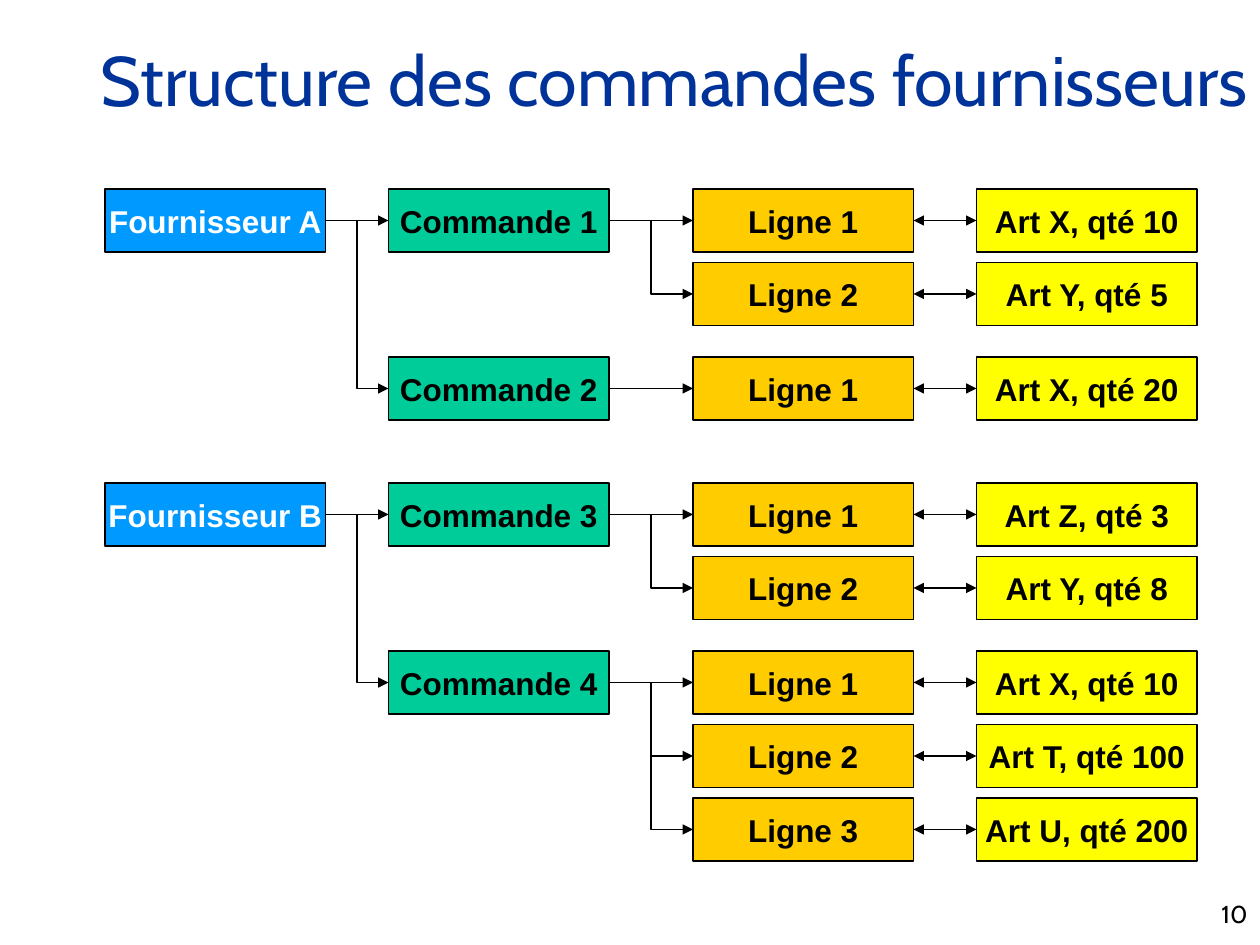
from pptx import Presentation
from pptx.dml.color import RGBColor
from pptx.enum.shapes import MSO_CONNECTOR, MSO_SHAPE
from pptx.enum.text import MSO_ANCHOR, PP_ALIGN
from pptx.oxml.ns import qn
from pptx.util import Pt
from lxml import etree

RECTANGLE = MSO_SHAPE.RECTANGLE
STRAIGHT, ELBOW = MSO_CONNECTOR.STRAIGHT, MSO_CONNECTOR.ELBOW
TOP, MIDDLE = MSO_ANCHOR.TOP, MSO_ANCHOR.MIDDLE
CENTER, RIGHT = PP_ALIGN.CENTER, PP_ALIGN.RIGHT
LEFT_SITE, RIGHT_SITE = 1, 3

COLORS = {
    "title": "003399",
    "black": "000000",
    "white": "FFFFFF",
    "supplier": "0099FF",
    "order": "00CC99",
    "line": "FFCC00",
    "article": "FFFF00",
}
COLUMNS = {"supplier": 60, "order": 222, "line": 396, "article": 558}
BOX_WIDTH, BOX_HEIGHT = 126, 36
FIRST_ROW = 108
LINE_PITCH, ORDER_GAP, SUPPLIER_GAP = 42, 12, 18

SUPPLIERS = {
    "Fournisseur A": {
        "Commande 1": ["Art X, qté 10", "Art Y, qté 5"],
        "Commande 2": ["Art X, qté 20"],
    },
    "Fournisseur B": {
        "Commande 3": ["Art Z, qté 3", "Art Y, qté 8"],
        "Commande 4": ["Art X, qté 10", "Art T, qté 100", "Art U, qté 200"],
    },
}


def color(name):
    return RGBColor.from_string(COLORS[name])


def write_text(shape, text, font_name, size, color_name, alignment, anchor, bold=False):
    text_frame = shape.text_frame
    text_frame.text = text
    text_frame.vertical_anchor = anchor
    paragraph = text_frame.paragraphs[0]
    paragraph.alignment = alignment
    font = paragraph.runs[0].font
    font.name, font.size, font.bold = font_name, Pt(size), bold
    font.color.rgb = color(color_name)


def add_label(slide, text, left, top, width, height, size, color_name, anchor):
    """Add a right-aligned text box."""
    shape = slide.shapes.add_textbox(Pt(left), Pt(top), Pt(width), Pt(height))
    shape.text_frame.word_wrap = True
    write_text(shape, text, "Cabin", size, color_name, RIGHT, anchor)


def add_box(slide, kind, text, top):
    shape = slide.shapes.add_shape(
        RECTANGLE, Pt(COLUMNS[kind]), Pt(top), Pt(BOX_WIDTH), Pt(BOX_HEIGHT))
    shape.shadow.inherit = False
    shape.fill.solid()
    shape.fill.fore_color.rgb = color(kind)
    shape.line.color.rgb = color("black")
    shape.line.width = Pt(0.75)
    shape.text_frame.word_wrap = False
    text_color = "white" if kind == "supplier" else "black"
    write_text(shape, text, "Arial", 18, text_color, CENTER, MIDDLE, bold=True)
    return shape


def add_arrow(slide, source, target, ends=("tailEnd",)):
    """Join two boxes, with an elbow when they are on different rows."""
    kind = STRAIGHT if source.top == target.top else ELBOW
    connector = slide.shapes.add_connector(kind, 0, 0, 0, 0)
    connector.begin_connect(source, RIGHT_SITE)
    connector.end_connect(target, LEFT_SITE)
    connector.line.color.rgb = color("black")
    connector.line.width = Pt(0.75)
    properties = connector._element.spPr
    line = properties.find(qn("a:ln"))
    for end in ends:
        etree.SubElement(line, qn(f"a:{end}"), type="triangle")
    etree.SubElement(properties, qn("a:effectLst"))


def add_order(slide, name, articles, top):
    """Add an order with its lines and articles; return its box."""
    order = add_box(slide, "order", name, top)
    for index, article_text in enumerate(articles):
        row = top + index * LINE_PITCH
        line = add_box(slide, "line", f"Ligne {index + 1}", row)
        article = add_box(slide, "article", article_text, row)
        add_arrow(slide, order, line)
        add_arrow(slide, line, article, ("headEnd", "tailEnd"))
    return order


def add_structure(slide):
    top = FIRST_ROW
    for supplier_name, orders in SUPPLIERS.items():
        supplier = add_box(slide, "supplier", supplier_name, top)
        for order_name, articles in orders.items():
            order = add_order(slide, order_name, articles, top)
            add_arrow(slide, supplier, order)
            top += len(articles) * LINE_PITCH + ORDER_GAP
        top += SUPPLIER_GAP


def main():
    presentation = Presentation()
    presentation.slide_width, presentation.slide_height = Pt(720), Pt(540)
    slide = presentation.slides.add_slide(presentation.slide_layouts[6])
    add_label(slide, "Structure des commandes fournisseurs",
              0, 0, 720, 90, 40, "title", MIDDLE)
    add_structure(slide)
    add_label(slide, "10", 570, 510, 150, 18, 14, "black", TOP)
    presentation.save("out.pptx")


if __name__ == "__main__":
    main()
